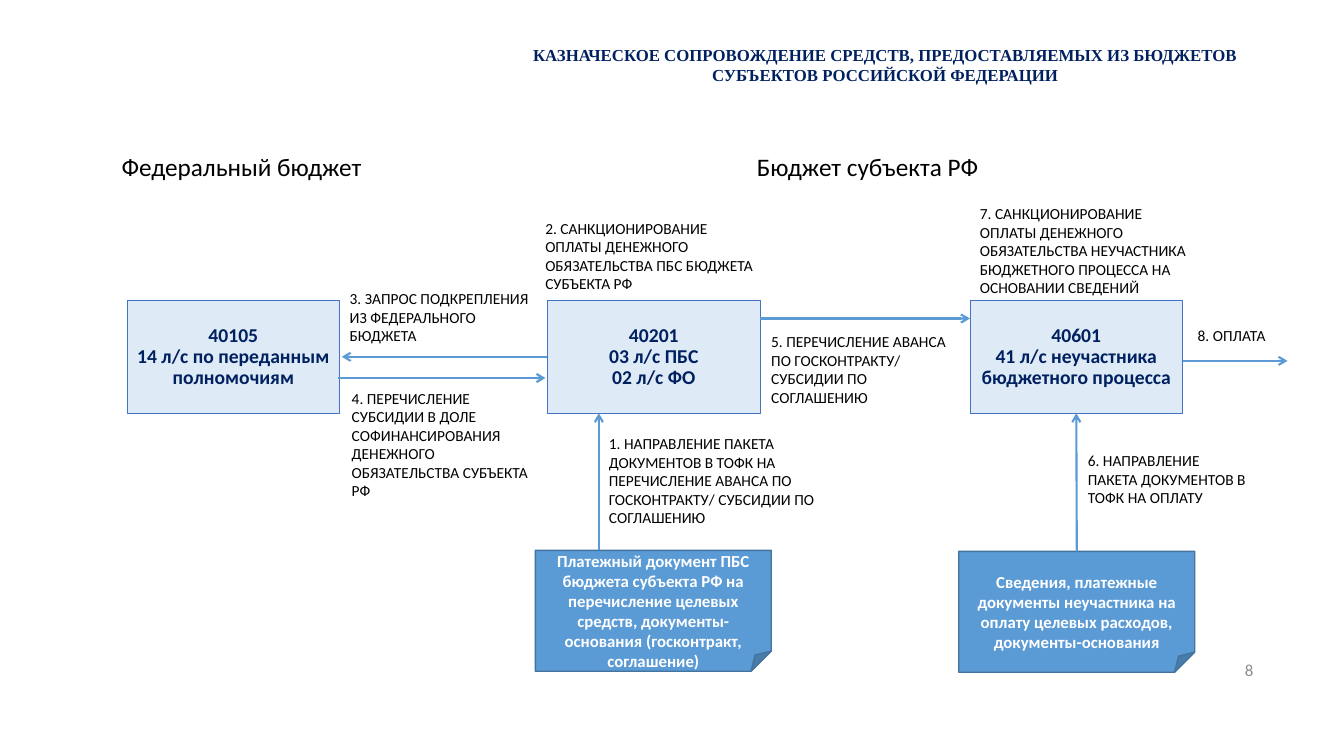
"""Build the slide on treasury support of funds from regional budgets."""
from lxml import etree
from pptx import Presentation
from pptx.dml.color import RGBColor
from pptx.enum import shapes, text
from pptx.oxml import ns
from pptx.util import Inches, Pt

NAVY = RGBColor(0x00, 0x20, 0x60)
BLACK = RGBColor(0x00, 0x00, 0x00)
WHITE = RGBColor(0xFF, 0xFF, 0xFF)
GREY = RGBColor(0x8C, 0x8C, 0x8C)
PALE = RGBColor(0xDE, 0xEB, 0xF7)
BORDER = RGBColor(0x44, 0x72, 0xC4)
BLUE = RGBColor(0x5B, 0x9B, 0xD5)
NOTE_BORDER = RGBColor(0x43, 0x73, 0x9E)
LEFT, CENTER, RIGHT = text.PP_ALIGN.LEFT, text.PP_ALIGN.CENTER, text.PP_ALIGN.RIGHT


def write(sp, words, size, color, align=LEFT, bold=False, font="Calibri", spacing=1.0):
    tf = sp.text_frame
    tf.word_wrap = True
    tf.text = words
    for p in tf.paragraphs:
        p.alignment = align
        p.line_spacing = spacing
        for r in p.runs:
            r.font.name, r.font.size, r.font.bold = font, Pt(size), bold
            r.font.color.rgb = color
    return tf


def add_block(kind, x, y, w, h, fill, border, width):
    sp = s.shapes.add_shape(kind, Inches(x), Inches(y), Inches(w), Inches(h))
    sp.shadow.inherit = False
    sp.fill.solid()
    sp.fill.fore_color.rgb = fill
    sp.line.color.rgb = border
    sp.line.width = Pt(width)
    return sp


prs = Presentation()
prs.slide_width, prs.slide_height = Inches(13.33), Inches(7.5)
s = prs.slides.add_slide(prs.slide_layouts[6])

sp = s.shapes.add_textbox(Inches(4.79), Inches(0.39), Inches(7.98), Inches(0.6))
write(sp, "КАЗНАЧЕСКОЕ СОПРОВОЖДЕНИЕ СРЕДСТВ, ПРЕДОСТАВЛЯЕМЫХ ИЗ БЮДЖЕТОВ "
      "СУБЪЕКТОВ РОССИЙСКОЙ ФЕДЕРАЦИИ", 12, NAVY, CENTER, True, "Times New Roman")

for x, w, words in [(1.09, 2.61, "Федеральный бюджет"), (7.38, 2.45, "Бюджет субъекта РФ")]:
    sp = s.shapes.add_textbox(Inches(x), Inches(1.49), Inches(w), Inches(0.37))
    write(sp, words, 18, BLACK, CENTER, spacing=0.9).word_wrap = False

accounts = []
for x, words in [
    (1.26, "40105\n14 л/с по переданным полномочиям"),
    (5.43, "40201\n03 л/с ПБС\n02 л/с ФО"),
    (9.62, "40601\n41 л/с неучастника бюджетного процесса"),
]:
    sp = add_block(shapes.MSO_SHAPE.RECTANGLE, x, 2.98, 2.11, 1.12, PALE, BORDER, 0.5)
    tf = write(sp, words, 14, NAVY, CENTER, True, spacing=0.9)
    tf.vertical_anchor = text.MSO_ANCHOR.MIDDLE
    tf.margin_left = tf.margin_right = tf.margin_top = tf.margin_bottom = Inches(0.01)
    accounts.append(sp)

notes = []
for x, y, words in [
    (5.31, 5.46, "Платежный документ ПБС бюджета субъекта РФ на перечисление целевых "
     "средств, документы-основания (госконтракт, соглашение)"),
    (9.51, 5.47, "Сведения, платежные документы неучастника на оплату целевых расходов, "
     "документы-основания"),
]:
    sp = add_block(shapes.MSO_SHAPE.FOLDED_CORNER, x, y, 2.34, 1.2, BLUE, NOTE_BORDER, 1)
    tf = write(sp, words, 12, WHITE, CENTER, True)
    tf.vertical_anchor = text.MSO_ANCHOR.MIDDLE
    tf.margin_top = Inches(0.25)
    notes.append(sp)

arrows = []
for x1, y1, x2, y2 in [
    (5.94, 5.46, 5.94, 4.1),
    (5.43, 3.54, 3.39, 3.54),
    (3.35, 3.75, 5.41, 3.75),
    (7.54, 3.16, 9.62, 3.16),
    (10.68, 5.47, 10.68, 4.1),
    (11.73, 3.58, 12.77, 3.58),
]:
    arrow = s.shapes.add_connector(shapes.MSO_CONNECTOR.STRAIGHT,
                                   Inches(x1), Inches(y1), Inches(x2), Inches(y2))
    arrow.line.color.rgb = BLUE
    arrow.line.width = Pt(1.5)
    etree.SubElement(arrow.line._get_or_add_ln(), ns.qn("a:tailEnd"), type="arrow")
    etree.SubElement(arrow._element.spPr, ns.qn("a:effectLst"))
    arrows.append(arrow)
arrows[1].begin_connect(accounts[1], 1)
arrows[4].begin_connect(notes[1], 0)
arrows[4].end_connect(accounts[2], 2)

steps = [
    (5.94, 4.26, 2.29, 1.03, "НАПРАВЛЕНИЕ ПАКЕТА ДОКУМЕНТОВ В ТОФК НА ПЕРЕЧИСЛЕНИЕ АВАНСА "
     "ПО ГОСКОНТРАКТУ/ СУБСИДИИ ПО СОГЛАШЕНИЮ"),
    (5.31, 2.12, 2.34, 0.84, "САНКЦИОНИРОВАНИЕ ОПЛАТЫ ДЕНЕЖНОГО ОБЯЗАТЕЛЬСТВА ПБС БЮДЖЕТА "
     "СУБЪЕКТА РФ"),
    (3.37, 2.82, 2.07, 0.66, "ЗАПРОС ПОДКРЕПЛЕНИЯ ИЗ ФЕДЕРАЛЬНОГО БЮДЖЕТА"),
    (3.39, 3.81, 2.07, 1.21, "ПЕРЕЧИСЛЕНИЕ СУБСИДИИ В ДОЛЕ СОФИНАНСИРОВАНИЯ ДЕНЕЖНОГО "
     "ОБЯЗАТЕЛЬСТВА СУБЪЕКТА РФ"),
    (7.55, 3.25, 2.09, 0.84, "ПЕРЕЧИСЛЕНИЕ АВАНСА ПО ГОСКОНТРАКТУ/ СУБСИДИИ ПО СОГЛАШЕНИЮ"),
    (10.69, 4.43, 1.78, 0.66, "НАПРАВЛЕНИЕ ПАКЕТА ДОКУМЕНТОВ В ТОФК НА ОПЛАТУ"),
    (9.62, 1.98, 2.34, 1.03, "САНКЦИОНИРОВАНИЕ ОПЛАТЫ ДЕНЕЖНОГО ОБЯЗАТЕЛЬСТВА НЕУЧАСТНИКА "
     "БЮДЖЕТНОГО ПРОЦЕССА НА ОСНОВАНИИ СВЕДЕНИЙ"),
    (11.78, 3.19, 0.94, 0.29, "ОПЛАТА"),
]
for number, (x, y, w, h, words) in enumerate(steps, 1):
    sp = s.shapes.add_textbox(Inches(x), Inches(y), Inches(w), Inches(h))
    write(sp, f"{number}. {words}", 11, BLACK)

sp = s.shapes.add_textbox(Inches(9.53), Inches(6.45), Inches(3), Inches(0.4))
write(sp, "8", 12, GREY, RIGHT).vertical_anchor = text.MSO_ANCHOR.MIDDLE

prs.save("out.pptx")
